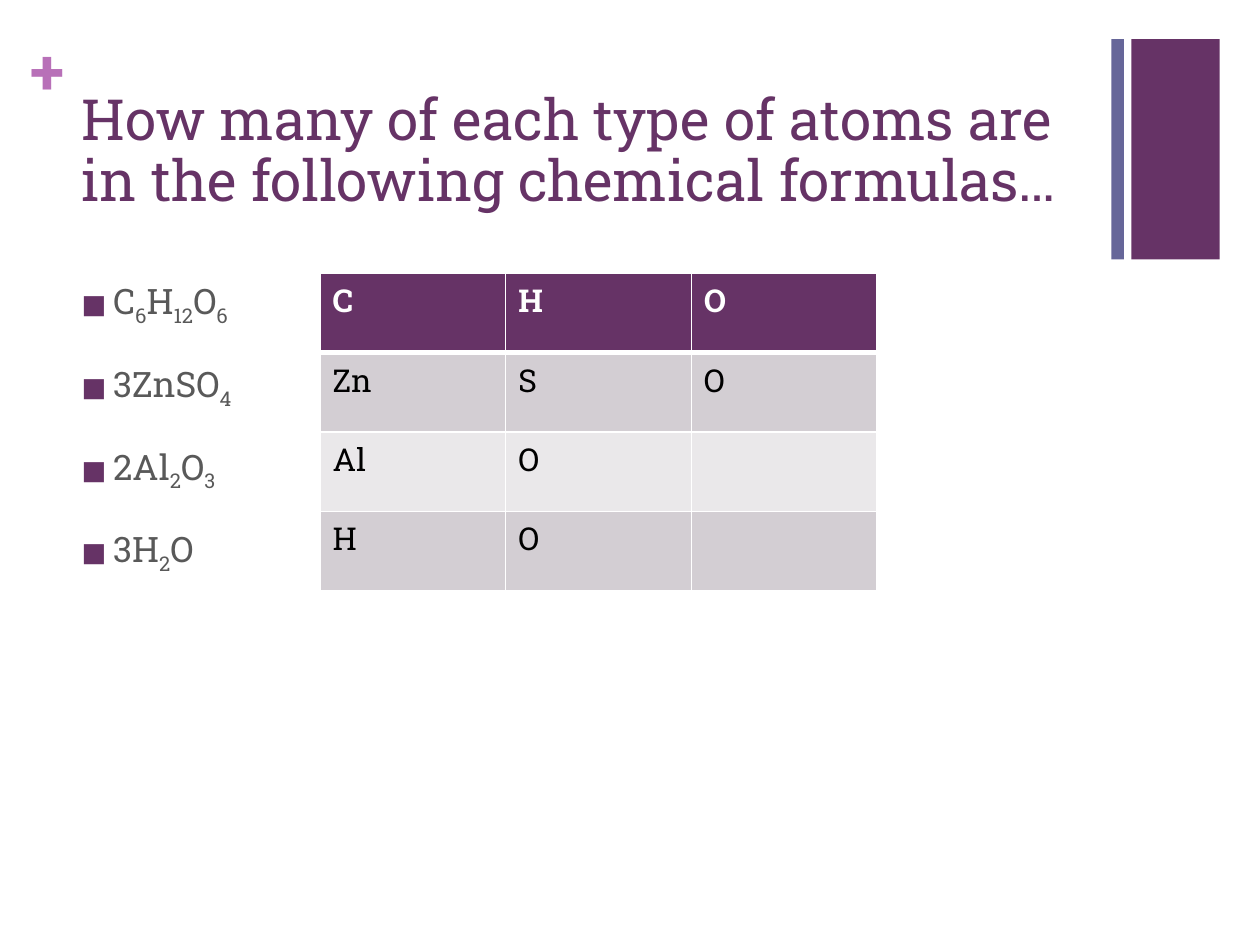
from itertools import groupby
from lxml.etree import SubElement
from pptx import Presentation
from pptx.dml.color import RGBColor
from pptx.enum.shapes import MSO_SHAPE
from pptx.enum.text import MSO_ANCHOR, MSO_AUTO_SIZE, PP_ALIGN
from pptx.oxml.ns import qn
from pptx.util import Inches, Pt

HUES = {"plum": "663366", "blue": "666699", "pink": "B870B8", "gray": "595959",
        "white": "FFFFFF", "black": "000000", "dark": "D3CED3", "pale": "EAE8EA"}
FONT = "Roboto Slab"

deck = Presentation()
deck.slide_width, deck.slide_height = Inches(10), Inches(7.5)
unit = deck.slide_width / 100
slide = deck.slides.add_slide(deck.slide_layouts[5])


def grid(*cells):
    return [round(cell * unit) for cell in cells]


def write(para, text, size=18, hue="black", bold=False, sub=False):
    para.alignment = PP_ALIGN.LEFT
    low = [sub and i > 0 and c.isdigit() for i, c in enumerate(text)]
    for drop, pairs in groupby(zip(low, text), lambda pair: pair[0]):
        run = para.add_run()
        run.text = "".join(c for _, c in pairs)
        font = run.font
        font.name, font.size, font.bold = FONT, Pt(size), bold
        font.color.rgb = RGBColor.from_string(HUES[hue])
        if drop:
            font._element.set("baseline", "-25000")


for left, width, hue in [(89.8, 7, "plum"), (88.2, 1, "blue")]:
    bar = slide.shapes.add_shape(MSO_SHAPE.RECTANGLE, *grid(left, 3.1, width, 17.5))
    bar.shadow.inherit = False
    bar.fill.solid()
    bar.fill.fore_color.rgb = RGBColor.from_string(HUES[hue])
    bar.line.fill.background()

plus = slide.shapes.add_textbox(*grid(2.4, 2.5, 2.9, 6.1)).text_frame
plus.margin_left = plus.margin_right = plus.margin_top = plus.margin_bottom = 0
write(plus.paragraphs[0], "+", size=36, hue="pink", bold=True)

title = slide.shapes.title
title.left, title.top, title.width, title.height = grid(5.5, 5.3, 82.6, 12.2)
head = title.text_frame
head.word_wrap = True
head.auto_size = MSO_AUTO_SIZE.NONE
head.vertical_anchor = MSO_ANCHOR.BOTTOM
head.paragraphs[0].line_spacing = 0.9
write(head.paragraphs[0],
      "How many of each type of atoms are in the following chemical formulas…",
      size=32.4, hue="plum")

body = slide.shapes.add_textbox(*grid(5.5, 21.7, 82.6, 45.3)).text_frame
body.word_wrap = True
for i, name in enumerate(["C6H12O6", "3ZnSO4", "2Al2O3", "3H2O"]):
    para = body.add_paragraph() if i else body.paragraphs[0]
    write(para, name, size=20, hue="gray", sub=True)
    para.space_before = Pt(20)
    props = para._p.get_or_add_pPr()
    props.set("marL", str(Inches(0.25)))
    props.set("indent", str(-Inches(0.25)))
    tint = SubElement(props, qn("a:buClr"))
    SubElement(tint, qn("a:srgbClr"), val=HUES["plum"])
    SubElement(props, qn("a:buSzPct"), val="75000")
    SubElement(props, qn("a:buFont"), typeface=FONT)
    SubElement(props, qn("a:buChar"), char="■")

rows = [["C", "H", "O"], ["Zn", "S", "O"], ["Al", "O", ""], ["H", "O", ""]]
fills = ["plum", "dark", "pale", "dark"]
frame = slide.shapes.add_table(len(rows), 3, *grid(25.4, 21.7, 44.2, 25.2))
table = frame.table
for r, row in enumerate(rows):
    for c, text in enumerate(row):
        cell = table.cell(r, c)
        if text:
            write(cell.text_frame.paragraphs[0], text,
                  hue="black" if r else "white", bold=r == 0)
        props = cell._tc.get_or_add_tcPr()
        for side in ["lnL", "lnR", "lnT", "lnB"]:
            thick = (r, side) in [(0, "lnB"), (1, "lnT")]
            edge = SubElement(props, qn("a:" + side), w=str(Pt(3 if thick else 1)))
            paint = SubElement(edge, qn("a:solidFill"))
            SubElement(paint, qn("a:srgbClr"), val=HUES["white"])
        cell.fill.solid()
        cell.fill.fore_color.rgb = RGBColor.from_string(HUES[fills[r]])

deck.save("out.pptx")
